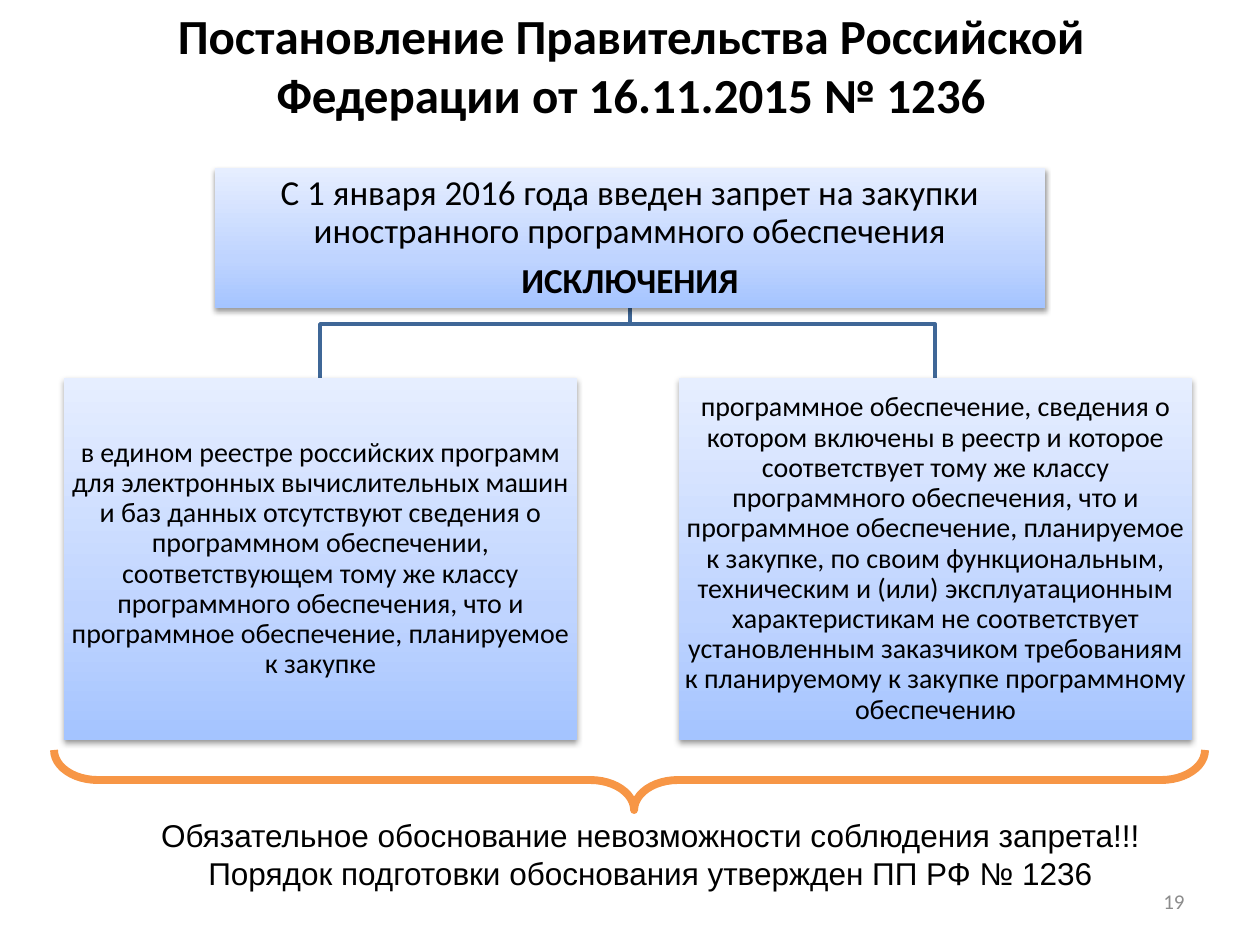
from lxml.etree import SubElement
from pptx import Presentation
from pptx.dml.color import RGBColor
from pptx.enum.shapes import MSO_SHAPE
from pptx.enum.text import MSO_ANCHOR, PP_ALIGN
from pptx.oxml import parse_xml
from pptx.oxml.ns import nsdecls, qn
from pptx.util import Emu, Pt

EMU_PER_PX = 914400 / 126
COLORS = {
    "text": "000000", "number": "8C8C8C", "connector": "3F6797", "brace": "F79646",
    "box_bottom": "A4C4FF", "box_middle": "BFD4FF", "box_top": "E6EEFF",
}
BOX_STOPS = ((0, "box_bottom"), (35, "box_middle"), (100, "box_top"))


def px(value):
    return Emu(round(value * EMU_PER_PX))


def color(name):
    return RGBColor.from_string(COLORS[name])


class SlideBuilder:
    def __init__(self, presentation):
        self.slide = presentation.slides.add_slide(presentation.slide_layouts[5])

    def format_text(self, frame, size, font="Calibri", fill="text", bold=False,
                    align=PP_ALIGN.CENTER, anchor=MSO_ANCHOR.MIDDLE):
        frame.word_wrap = True
        frame.vertical_anchor = anchor
        for paragraph in frame.paragraphs:
            paragraph.alignment = align
            for run in paragraph.runs:
                run.font.name = font
                run.font.size = Pt(size)
                run.font.bold = bold
                run.font.color.rgb = color(fill)

    def title(self, text, left, top, width, height, size):
        shape = self.slide.shapes.title
        shape.left, shape.top, shape.width, shape.height = map(px, (left, top, width, height))
        shape.text_frame.text = text
        self.format_text(shape.text_frame, size, bold=True)

    def text(self, text, left, top, width, height, size, **style):
        shape = self.slide.shapes.add_textbox(*map(px, (left, top, width, height)))
        shape.text_frame.text = text
        self.format_text(shape.text_frame, size, **style)

    def box(self, text, left, top, width, height, size):
        """Add a rectangle with a vertical gradient, a soft shadow and centred text."""
        shape = self.slide.shapes.add_shape(
            MSO_SHAPE.RECTANGLE, *map(px, (left, top, width, height)))
        shape.line.fill.background()
        self.fill_gradient(shape)
        self.add_shadow(shape)
        frame = shape.text_frame
        frame.text = text
        frame.margin_left = frame.margin_right = px(1)
        frame.margin_top = frame.margin_bottom = px(1)
        self.format_text(frame, size)
        for paragraph in frame.paragraphs:
            paragraph.line_spacing = 0.9
            paragraph.space_after = Pt(0.35 * size)
        return frame

    def fill_gradient(self, shape):
        stops = "".join(
            f'<a:gs pos="{position * 1000}"><a:srgbClr val="{COLORS[name]}"/></a:gs>'
            for position, name in BOX_STOPS)
        gradient = parse_xml(
            f'<a:gradFill {nsdecls("a")} rotWithShape="1"><a:gsLst>{stops}</a:gsLst>'
            '<a:lin ang="16200000" scaled="0"/></a:gradFill>')
        shape._element.spPr.find(qn("a:prstGeom")).addnext(gradient)

    def add_shadow(self, shape):
        shape.shadow.inherit = False
        effects = shape._element.spPr.find(qn("a:effectLst"))
        shadow = SubElement(effects, qn("a:outerShdw"), blurRad=str(Pt(3.1)),
                            dist=str(Pt(1.6)), dir="5400000", rotWithShape="0")
        shade = SubElement(shadow, qn("a:srgbClr"), val="000000")
        SubElement(shade, qn("a:alpha"), val="38000")

    def outline(self, shape, line, width):
        shape.shadow.inherit = False
        shape.fill.background()
        shape.line.color.rgb = color(line)
        shape.line.width = Pt(width)

    def elbow(self, points):
        start, *others = points
        builder = self.slide.shapes.build_freeform(*start, scale=EMU_PER_PX)
        builder.add_line_segments(others, close=False)
        self.outline(builder.convert_to_shape(), "connector", 2)

    def brace_below(self, left, top, width, height):
        """Add a brace that opens upwards, from a left brace turned about its centre."""
        shape = self.slide.shapes.add_shape(
            MSO_SHAPE.LEFT_BRACE, px(left + (width - height) / 2),
            px(top - (width - height) / 2), px(height), px(width))
        shape.rotation = 270
        shape.adjustments[0] = 0.73
        shape.adjustments[1] = 0.504
        self.outline(shape, "brace", 4.5)


def main():
    presentation = Presentation()
    presentation.slide_width, presentation.slide_height = px(1260), px(945)
    builder = SlideBuilder(presentation)
    builder.title("Постановление Правительства Российской Федерации от 16.11.2015 № 1236",
                  64, 16, 1134, 97, 28)

    exceptions = (
        (64, "в едином реестре российских программ для электронных вычислительных машин "
             "и баз данных отсутствуют сведения о программном обеспечении, соответствующем "
             "тому же классу программного обеспечения, что и программное обеспечение, "
             "планируемое к закупке"),
        (679, "программное обеспечение, сведения о котором включены в реестр и которое "
              "соответствует тому же классу программного обеспечения, что и программное "
              "обеспечение, планируемое к закупке, по своим функциональным, техническим "
              "и (или) эксплуатационным характеристикам не соответствует установленным "
              "заказчиком требованиям к планируемому к закупке программному обеспечению"),
    )
    box_width, box_top, ban_bottom, ban_center, fork = 513, 378, 308, 630, 324
    for left, _ in exceptions:
        center = left + box_width // 2
        builder.elbow([(ban_center, ban_bottom), (ban_center, fork),
                       (center, fork), (center, box_top)])
    ban = builder.box("С 1 января 2016 года введен запрет на закупки иностранного "
                      "программного обеспечения\nИСКЛЮЧЕНИЯ", 215, 168, 830, 140, 20)
    ban.paragraphs[1].runs[0].font.bold = True
    for left, text in exceptions:
        builder.box(text, left, box_top, box_width, 362, 16)

    builder.text("19", 903, 876, 294, 50, 12, fill="number", align=PP_ALIGN.RIGHT)
    builder.text("Обязательное обоснование невозможности соблюдения запрета!!! "
                 "Порядок подготовки обоснования утвержден ПП РФ № 1236",
                 105, 810, 1091, 89, 18, font="Arial", anchor=MSO_ANCHOR.TOP)
    builder.brace_below(54, 750, 1151, 60)
    presentation.save("out.pptx")


if __name__ == "__main__":
    main()
